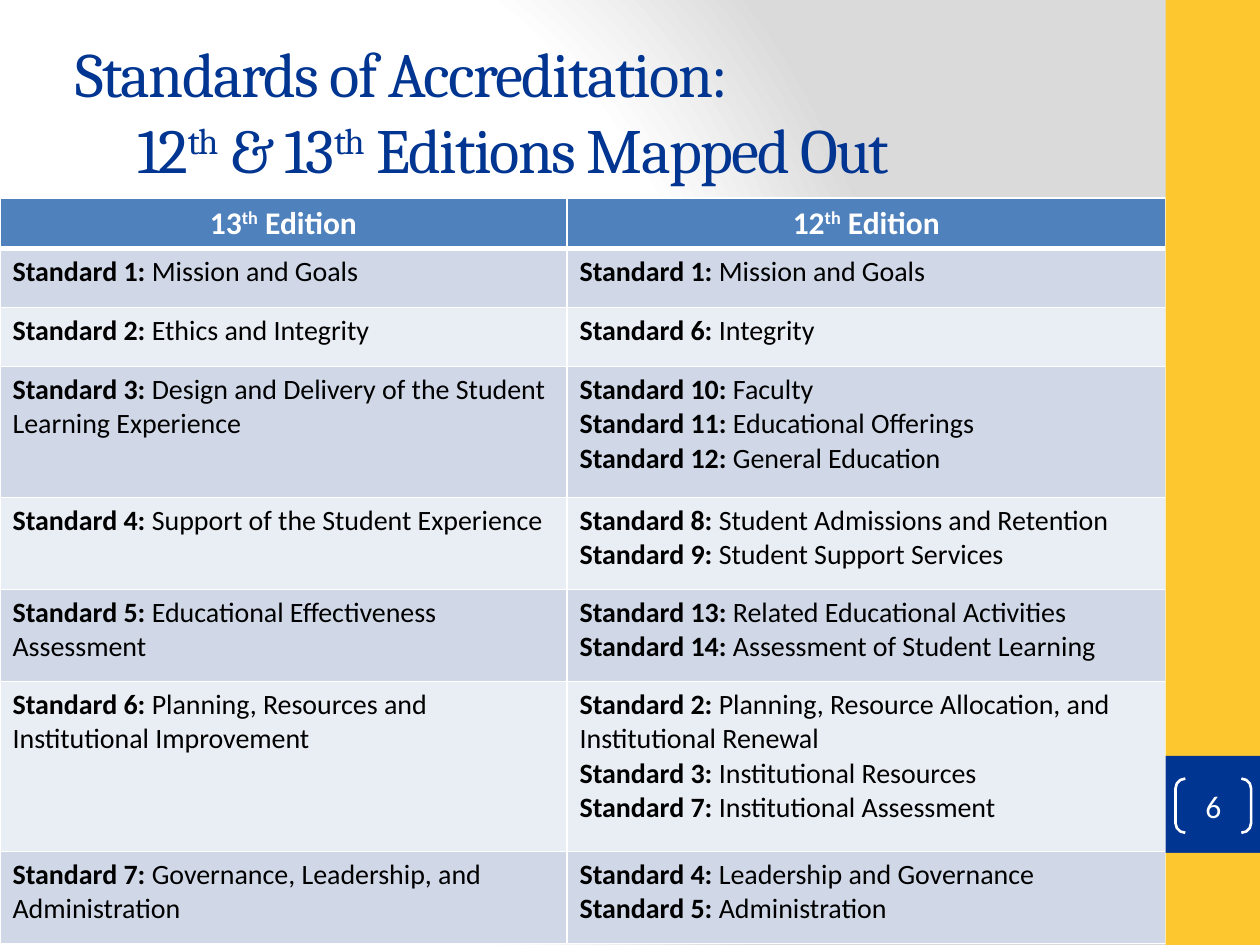
from dataclasses import dataclass

from lxml import etree
from pptx import Presentation
from pptx.dml.color import RGBColor
from pptx.enum import shapes, text
from pptx.oxml import parse_xml
from pptx.oxml.ns import nsdecls, qn
from pptx.util import Inches, Pt


@dataclass(frozen=True)
class Theme:
    blue: str = "003591"
    gold: str = "FDC82F"
    header: str = "4F81BD"
    bands: tuple = ("D0D8E8", "E9EDF4")
    white: str = "FFFFFF"
    grey: str = "DADADA"
    black: str = "000000"
    title_font: str = "Cambria"
    body_font: str = "Calibri"
    title_size: int = 36
    head_size: int = 18
    body_size: int = 16


THEME = Theme()
SUPERSCRIPT = "30000"

TITLE = ["Standards of Accreditation:", "12^th^ & 13^th^ Editions Mapped Out"]
HEADINGS = ["13^th^ Edition", "12^th^ Edition"]
# Each row: height, 13th edition standards, 12th edition standards
ROWS = [
    (0.47, [(1, "Mission and Goals")], [(1, "Mission and Goals")]),
    (0.47, [(2, "Ethics and Integrity")], [(6, "Integrity")]),
    (1.04, [(3, "Design and Delivery of the Student Learning Experience")],
     [(10, "Faculty"), (11, "Educational Offerings"), (12, "General Education")]),
    (0.73, [(4, "Support of the Student Experience")],
     [(8, "Student Admissions and Retention"), (9, "Student Support Services")]),
    (0.73, [(5, "Educational Effectiveness Assessment")],
     [(13, "Related Educational Activities"), (14, "Assessment of Student Learning")]),
    (1.35, [(6, "Planning, Resources and Institutional Improvement")],
     [(2, "Planning, Resource Allocation, and Institutional Renewal"),
      (3, "Institutional Resources"), (7, "Institutional Assessment")]),
    (0.73, [(7, "Governance, Leadership, and Administration")],
     [(4, "Leadership and Governance"), (5, "Administration")]),
]


def add_span(para, words, font, size, color, bold=False):
    span = para.add_run()
    span.text = words
    span.font.name = font
    span.font.size = Pt(size)
    span.font.bold = bold
    span.font.color.rgb = RGBColor.from_string(color)
    return span


def add_ordinals(para, words, *style):
    """Add text in which the parts between carets are raised."""
    spans = []
    for index, part in enumerate(words.split("^")):
        span = add_span(para, part, *style)
        if index % 2:
            span.font._element.set("baseline", SUPERSCRIPT)
        spans.append(span)
    return spans


def paint_background(page):
    fill = page.background.fill
    fill.gradient()
    stops = [(0, THEME.white), (75, THEME.white), (100, THEME.grey)]
    stop_xml = "".join(f'<a:gs pos="{place * 1000}"><a:srgbClr val="{color}"/></a:gs>'
                       for place, color in stops)
    gradient = parse_xml(
        f'<a:gradFill {nsdecls("a")} rotWithShape="1"><a:gsLst>{stop_xml}</a:gsLst>'
        '<a:path path="circle"><a:fillToRect l="20000" t="50000" r="100000" b="50000"/>'
        '</a:path></a:gradFill>')
    linear = page._element.find(".//" + qn("a:gradFill"))
    linear.getparent().replace(linear, gradient)


def add_title(page, left, top, width, height):
    box = page.shapes.add_textbox(Inches(left), Inches(top), Inches(width), Inches(height))
    frame = box.text_frame
    frame.word_wrap = True
    frame.vertical_anchor = text.MSO_ANCHOR.MIDDLE
    for index, line in enumerate(TITLE):
        para = frame.add_paragraph() if index else frame.paragraphs[0]
        if index:
            para._p.get_or_add_pPr().set("marL", str(Inches(0.49)))
        for span in add_ordinals(para, line, THEME.title_font, THEME.title_size, THEME.blue):
            span.font._element.set("spc", "-100")


def style_cell(cell, color, top_line=1, bottom_line=1):
    cell.fill.solid()
    cell.fill.fore_color.rgb = RGBColor.from_string(color)
    sides = [("L", 1), ("R", 1), ("T", top_line), ("B", bottom_line)]
    for index, (side, points) in enumerate(sides):
        line = parse_xml(f'<a:ln{side} {nsdecls("a")} w="{Pt(points)}"><a:solidFill>'
                         f'<a:srgbClr val="{THEME.white}"/></a:solidFill></a:ln{side}>')
        cell._tc.get_or_add_tcPr().insert(index, line)


def fill_standards(cell, standards):
    frame = cell.text_frame
    for index, (number, name) in enumerate(standards):
        para = frame.add_paragraph() if index else frame.paragraphs[0]
        style = THEME.body_font, THEME.body_size, THEME.black
        add_span(para, f"Standard {number}: ", *style, bold=True)
        add_span(para, name, *style)


def add_standards_table(page, left, top, widths, head_height):
    heights = [head_height] + [row[0] for row in ROWS]
    grid = page.shapes.add_table(len(heights), len(widths), Inches(left), Inches(top),
                                 Inches(sum(widths)), Inches(sum(heights))).table
    for column, width in zip(grid.columns, widths):
        column.width = Inches(width)
    for row, height in zip(grid.rows, heights):
        row.height = Inches(height)
    # Header row
    for column, heading in enumerate(HEADINGS):
        cell = grid.cell(0, column)
        style_cell(cell, THEME.header, bottom_line=3)
        para = cell.text_frame.paragraphs[0]
        para.alignment = text.PP_ALIGN.CENTER
        add_ordinals(para, heading, THEME.body_font, THEME.head_size, THEME.white, True)
    # Banded body rows
    for index, (_, *editions) in enumerate(ROWS):
        for column, standards in enumerate(editions):
            cell = grid.cell(index + 1, column)
            style_cell(cell, THEME.bands[index % 2], top_line=1 if index else 3)
            fill_standards(cell, standards)


def add_shape(page, kind, left, top, width, height):
    shape = page.shapes.add_shape(kind, Inches(left), Inches(top), Inches(width), Inches(height))
    shape.shadow.inherit = False
    return shape


def add_sidebar(page, left, width, height):
    # Gold, blue and gold blocks
    tops = [0, 6, 6.77, height]
    for top, bottom, color in zip(tops, tops[1:], [THEME.gold, THEME.blue, THEME.gold]):
        block = add_shape(page, shapes.MSO_SHAPE.RECTANGLE, left, top, width, bottom - top)
        block.fill.solid()
        block.fill.fore_color.rgb = RGBColor.from_string(color)
        block.line.fill.background()
    # Page number in brackets
    badge = add_shape(page, shapes.MSO_SHAPE.DOUBLE_BRACKET, left + 0.08, 6.18, 0.6, 0.43)
    badge.adjustments[0] = 0.18
    badge.fill.background()
    badge.line.color.rgb = RGBColor.from_string(THEME.white)
    badge.line.width = Pt(1.5)
    frame = badge.text_frame
    frame.margin_left = frame.margin_right = frame.margin_top = frame.margin_bottom = 0
    frame.vertical_anchor = text.MSO_ANCHOR.MIDDLE
    para = frame.paragraphs[0]
    para.alignment = text.PP_ALIGN.CENTER
    number = add_span(para, "", THEME.body_font, THEME.head_size, THEME.white)
    number.text = "6"


def main():
    deck = Presentation()
    deck.slide_width, deck.slide_height = Inches(10), Inches(7.5)
    page = deck.slides.add_slide(deck.slide_layouts[6])
    paint_background(page)
    add_title(page, 0.5, 0.25, 8.58, 1.25)
    add_standards_table(page, 0, 1.57, [4.5, 4.75], 0.4)
    add_sidebar(page, 9.25, 0.75, 7.5)
    deck.save("out.pptx")


if __name__ == "__main__":
    main()
